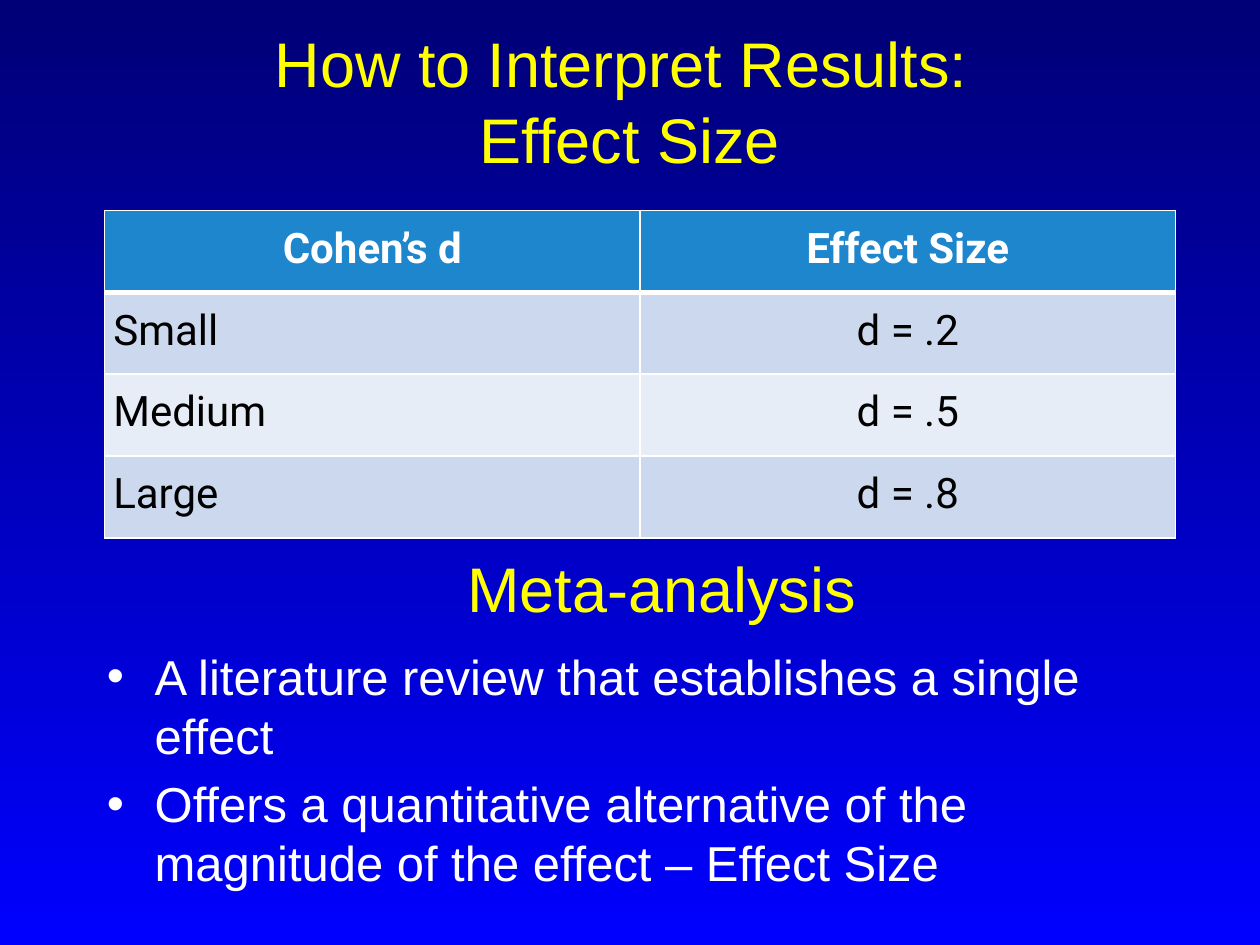
from lxml.etree import SubElement
from pptx import Presentation
from pptx.dml.color import RGBColor
from pptx.enum.text import MSO_ANCHOR as Anchor, PP_ALIGN as Align
from pptx.oxml.ns import qn
from pptx.util import Inches, Pt

COLORS = {
    "top": "000076", "bottom": "0000FF", "title": "FFFF00", "white": "FFFFFF",
    "black": "000000", "header": "1D86CD", "band": "CBD8ED", "light": "E7EDF6",
}


def rgb(name):
    return RGBColor.from_string(COLORS[name])


def write(frame, lines, size=36, font="Arial", color="title", bold=False,
          align=Align.CENTER, anchor=Anchor.MIDDLE, spacing=None, before=0, bullet=None):
    """Fill a text frame, one paragraph per line of text."""
    frame.word_wrap = True
    frame.vertical_anchor = anchor
    for index, line in enumerate(lines):
        paragraph = frame.paragraphs[0] if index == 0 else frame.add_paragraph()
        paragraph.text = line
        paragraph.alignment = align
        paragraph.line_spacing = spacing
        paragraph.space_before = Pt(before if index else 0)
        for run in paragraph.runs:
            run.font.name, run.font.size, run.font.bold = font, Pt(size), bold
            run.font.color.rgb = rgb(color)
        if bullet:
            properties = paragraph._p.get_or_add_pPr()
            properties.set("marL", str(Inches(0.38)))
            properties.set("indent", str(-Inches(0.38)))
            SubElement(properties, qn("a:buFont"), typeface=font)
            SubElement(properties, qn("a:buChar"), char=bullet)


presentation = Presentation()
presentation.slide_width, presentation.slide_height = Inches(10), Inches(7.5)
slide = presentation.slides.add_slide(presentation.slide_layouts[6])

# Background: dark blue at the top to bright blue at the bottom
background = slide.background.fill
background.gradient()
background.gradient_angle = 270
for stop, name, position in zip(background.gradient_stops, ("top", "bottom"), (0, 1)):
    stop.color.rgb = rgb(name)
    stop.position = position

# Title, subheading and bullets share one width
TEXTS = [
    (0.75, 0.17, 1.25, ["How to Interpret Results: \vEffect Size"], {}),
    (1, 4.33, 0.67, ["Meta-analysis"], {}),
    (0.75, 5.08, 2.42,
     ["A literature review that establishes a single effect",
      "Offers a quantitative alternative of the magnitude of the effect – Effect Size"],
     dict(size=28, color="white", align=Align.LEFT, anchor=Anchor.TOP, before=5.6, bullet="•")),
]
for left, top, height, lines, style in TEXTS:
    box = slide.shapes.add_textbox(Inches(left), Inches(top), Inches(8.5), Inches(height))
    write(box.text_frame, lines, **style)

# Effect size table
ROWS = [("Cohen’s d", "Effect Size"), ("Small", "d = .2"), ("Medium", "d = .5"), ("Large", "d = .8")]
FILLS = ["header", "band", "light", "band"]
row_height = 0.65
table = slide.shapes.add_table(len(ROWS), 2, Inches(0.83), Inches(1.67),
                               Inches(8.5), Inches(row_height * len(ROWS))).table
for row, values in enumerate(ROWS):
    header = row == 0
    for column, value in enumerate(values):
        cell = table.cell(row, column)
        cell.margin_left = cell.margin_right = Inches(0.07)
        cell.margin_top = cell.margin_bottom = 0
        cell.vertical_anchor = Anchor.MIDDLE
        write(cell.text_frame, [value], size=24, font="Roboto", bold=header,
              color="white" if header else "black", spacing=0.79, anchor=None,
              align=Align.CENTER if header or column else Align.LEFT)
        # Borders come before the fill, with a heavy rule around the header's foot
        properties = cell._tc.get_or_add_tcPr()
        for side in "LRTB":
            heavy = (row, side) in ((0, "B"), (1, "T"))
            line = SubElement(properties, qn(f"a:ln{side}"), w=str(Pt(3 if heavy else 1)))
            solid = SubElement(line, qn("a:solidFill"))
            SubElement(solid, qn("a:srgbClr"), val=COLORS["white"])
        cell.fill.solid()
        cell.fill.fore_color.rgb = rgb(FILLS[row])

presentation.save("out.pptx")
